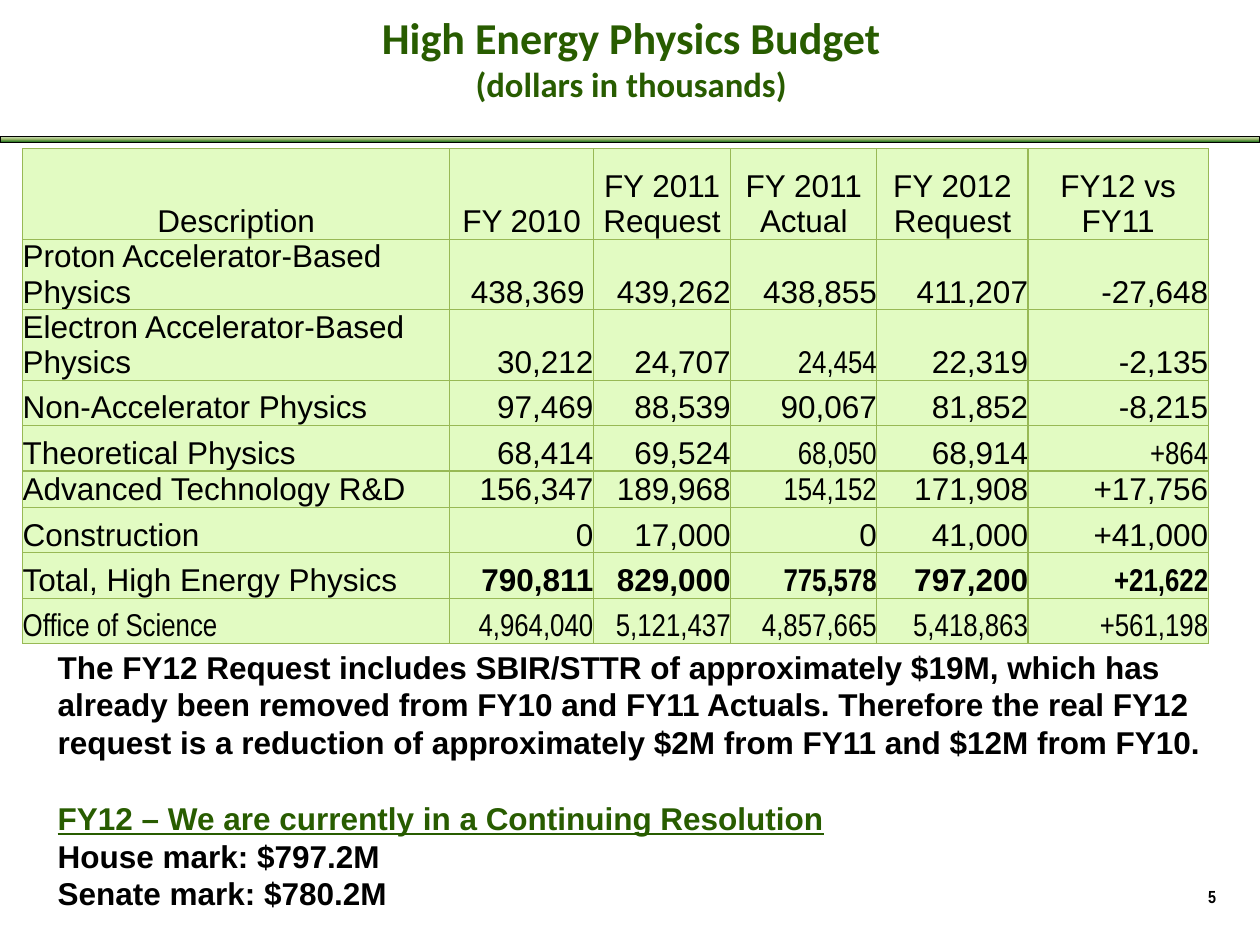
import copy

import pptx
import pptx.dml.color
import pptx.enum.dml
import pptx.enum.shapes
import pptx.enum.text
import pptx.oxml
import pptx.oxml.ns
import pptx.util

Inches = pptx.util.Inches
Pt = pptx.util.Pt
RGBColor = pptx.dml.color.RGBColor
ALIGN = pptx.enum.text.PP_ALIGN
ANCHOR = pptx.enum.text.MSO_ANCHOR

BLACK = RGBColor(0x00, 0x00, 0x00)
GREEN = RGBColor(0x28, 0x5C, 0x00)
CELL_FILL = RGBColor(0xE2, 0xFB, 0xC2)
BORDER = RGBColor(0x98, 0xB9, 0x55)
BAR_STOPS = [
    (0, RGBColor(0xDD, 0xEB, 0xCF)),
    (0.5, RGBColor(0x9C, 0xB8, 0x6E)),
    (1, RGBColor(0x15, 0x6B, 0x13)),
]

BODY = {"name": "Arial", "size": Pt(18), "bold": False, "color": BLACK}
NARROW = {**BODY, "name": "Arial Narrow"}
STRONG = {**BODY, "bold": True}
HEADING = {**STRONG, "color": GREEN, "underline": True}
TITLE = {"name": "Calibri", "size": Pt(25.2), "bold": True, "color": GREEN}
SUBTITLE = {**TITLE, "size": Pt(19.8)}
NUMBER = {**NARROW, "size": Pt(10), "bold": True}

COLUMNS = [3.39, 1.14, 1.09, 1.16, 1.2, 1.43]
ROWS = [0.72, 0.36, 0.4, 0.36, 0.36, 0.29, 0.36, 0.36, 0.36]
CELL_LINE = Pt(20.15)
BUDGET = [
    ["Description", "FY 2010", "FY 2011 Request", "FY 2011 Actual", "FY 2012 Request", "FY12 vs FY11"],
    ["Proton Accelerator-Based Physics", "438,369 ", "439,262", "438,855", "411,207", "-27,648"],
    ["Electron Accelerator-Based Physics", "30,212", "24,707", "24,454", "22,319", "-2,135"],
    ["Non-Accelerator Physics", "97,469", "88,539", "90,067", "81,852", "-8,215"],
    ["Theoretical Physics", "68,414", "69,524", "68,050", "68,914", "+864"],
    ["Advanced Technology R&D", "156,347", "189,968", "154,152", "171,908", "+17,756"],
    ["Construction", "0", "17,000", "0", "41,000", "+41,000"],
    ["Total, High Energy Physics", "790,811", "829,000", "775,578", "797,200", "+21,622"],
    ["Office of Science", "4,964,040", "5,121,437", "4,857,665", "5,418,863", "+561,198"],
]
TOTAL_ROW = 7
OFFICE_ROW = 8
NARROW_CELLS = {(2, 3), (4, 3), (4, 5), (5, 3), (7, 3), (7, 5)}

NOTES = [
    ("The FY12 Request includes SBIR/STTR of approximately $19M, which has already been "
     "removed from FY10 and FY11 Actuals. Therefore the real FY12 request is a reduction "
     "of approximately $2M from FY11 and $12M from FY10.", STRONG, 0),
    ("FY12 – We are currently in a Continuing Resolution", HEADING, 21.6),
    ("House mark: $797.2M", STRONG, 0),
    ("Senate mark: $780.2M", STRONG, 0),
]


def add_run(p, text, style):
    r = p.add_run()
    r.text = text
    for key, value in style.items():
        if key == "color":
            r.font.color.rgb = value
        else:
            setattr(r.font, key, value)


def add_text_frame(s, box, anchor=ANCHOR.TOP):
    tf = s.shapes.add_textbox(*map(Inches, box)).text_frame
    tf.word_wrap = True
    tf.vertical_anchor = anchor
    return tf


def add_bar(s, box):
    sp = s.shapes.add_shape(pptx.enum.shapes.MSO_SHAPE.RECTANGLE, *map(Inches, box))
    sp.shadow.inherit = False
    sp.line.color.rgb = BLACK
    sp.line.width = Pt(0.5)
    sp.fill.gradient()
    sp.fill.gradient_angle = 270
    stops = sp._element.spPr.find(".//" + pptx.oxml.ns.qn("a:gsLst"))
    stops.append(copy.deepcopy(stops[0]))
    for stop, (position, color) in zip(sp.fill.gradient_stops, BAR_STOPS):
        stop.position = position
        stop.color.rgb = color


def add_title(s, box):
    p = add_text_frame(s, box, ANCHOR.MIDDLE).paragraphs[0]
    p.alignment = ALIGN.CENTER
    add_run(p, "High Energy Physics Budget", TITLE)
    p.add_line_break()
    add_run(p, "(dollars in thousands)", SUBTITLE)


def add_borders(cell):
    tc_pr = cell._tc.get_or_add_tcPr()
    for i, side in enumerate(("lnL", "lnR", "lnT", "lnB")):
        tc_pr.insert(i, pptx.oxml.parse_xml(
            f'<a:{side} {pptx.oxml.ns.nsdecls("a")} w="{Pt(0.75)}"><a:solidFill>'
            f'<a:srgbClr val="{BORDER}"/></a:solidFill></a:{side}>'))


def cell_style(row, col):
    style = NARROW if row == OFFICE_ROW or (row, col) in NARROW_CELLS else BODY
    return {**style, "bold": row == TOTAL_ROW and col > 0}


def cell_alignment(row, col):
    if row == 0:
        return ALIGN.CENTER
    return ALIGN.RIGHT if col else ALIGN.LEFT


def add_budget_table(s, box):
    table = s.shapes.add_table(len(ROWS), len(COLUMNS), *map(Inches, box)).table
    for column, width in zip(table.columns, COLUMNS):
        column.width = Inches(width)
    for row, height in zip(table.rows, ROWS):
        row.height = Inches(height)
    for i, values in enumerate(BUDGET):
        for j, value in enumerate(values):
            cell = table.cell(i, j)
            for side in ("left", "right", "top", "bottom"):
                setattr(cell, f"margin_{side}", 0)
            cell.vertical_anchor = ANCHOR.BOTTOM
            cell.fill.solid()
            cell.fill.fore_color.rgb = CELL_FILL
            add_borders(cell)
            p = cell.text_frame.paragraphs[0]
            p.alignment = cell_alignment(i, j)
            p.line_spacing = CELL_LINE
            add_run(p, value, cell_style(i, j))


def add_notes(s, box):
    tf = add_text_frame(s, box)
    for i, (text, style, gap) in enumerate(NOTES):
        p = tf.add_paragraph() if i else tf.paragraphs[0]
        if gap:
            p.space_before = Pt(gap)
        add_run(p, text, style)


def add_slide_number(s, box):
    p = add_text_frame(s, box).paragraphs[0]
    p.alignment = ALIGN.RIGHT
    add_run(p, "5", NUMBER)


def main():
    prs = pptx.Presentation()
    prs.slide_width, prs.slide_height = Inches(10), Inches(7.5)
    s = prs.slides.add_slide(prs.slide_layouts[6])
    add_bar(s, (0, 1.08, 10, 0.05))
    add_title(s, (0.51, 0.08, 9, 0.75))
    add_budget_table(s, (0.18, 1.18, sum(COLUMNS), sum(ROWS)))
    add_slide_number(s, (7.41, 6.98, 2.34, 0.52))
    add_notes(s, (0.36, 5.09, 9.34, 2.22))
    prs.save("out.pptx")


if __name__ == "__main__":
    main()
